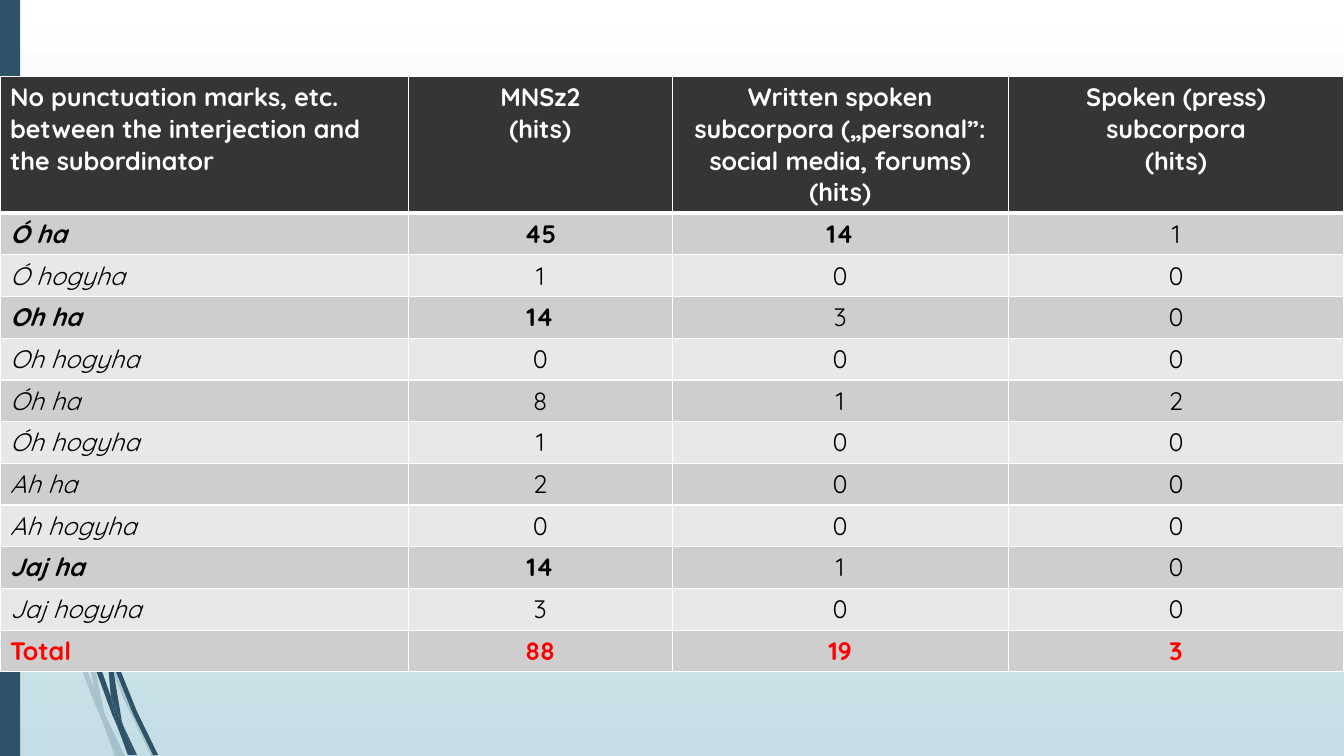
"""Build a slide with a table of interjection and subordinator hits."""
import pptx
import pptx.dml.color
import pptx.enum.shapes
import pptx.enum.text
import pptx.oxml
import pptx.oxml.ns
import pptx.util

Pt = pptx.util.Pt
tint = {"navy": "2E5369", "head": "353535", "odd": "CECECE", "even": "E8E8E8",
        "white": "FFFFFF", "black": "000000", "red": "FF0000", "sky": "C5DEE5"}
space = 'xmlns:a="http://schemas.openxmlformats.org/drawingml/2006/main"'


def rgb(name):
    return pptx.dml.color.RGBColor.from_string(tint[name])


def paint(shape, name):
    shape.shadow.inherit = False
    shape.fill.solid()
    shape.fill.fore_color.rgb = rgb(name)
    shape.line.fill.background()


deck = pptx.Presentation()
deck.slide_width, deck.slide_height = Pt(960), Pt(540)
slide = deck.slides.add_slide(deck.slide_layouts[6])

back = slide.background.fill
back.gradient()
back.gradient_angle = 270
for stop, name in zip(back.gradient_stops, ("white", "sky")):
    stop.color.rgb = rgb(name)

pale = [
    [(66.2, 437), (63.4, 429.1), (63.4, 439.2), (88.6, 499.7), (108, 540),
     (111.6, 540), (91.4, 498.2)],
    [(85.7, 540), (89.3, 540), (75.6, 511.9)],
    [(67, 491.8), (50.4, 445.7), (22.3, 337.7), (12.2, 270.7), (7.9, 252),
     (20.2, 338.4), (46.8, 447.1), (66.2, 499), (72.7, 514.1), (71.3, 509)],
    [(60.5, 431.3), (62.6, 465.1), (67, 491.8), (69.1, 498.2), (75.6, 511.9),
     (74.2, 508.3), (65.5, 465.1), (63.4, 439.2), (63.4, 437.8)],
    [(72.7, 514.1), (82.1, 540), (85.7, 540)],
    [(69.1, 498.2), (67, 491.8), (71.3, 509), (72.7, 514.1), (85.7, 540),
     (75.6, 511.9)],
]
dark = [
    [(81.4, 467.3), (79.2, 461.5), (79.9, 472.3), (95, 509.8), (109.4, 539.3),
     (113, 539.3), (97.9, 508.3)],
    [(79.2, 497.5), (70.6, 473), (51.8, 400.3), (46.1, 363.6), (41, 343.4),
     (49, 401), (67, 474.5), (79.9, 509.8), (84.2, 519.8), (83.5, 516.2)],
    [(95.8, 539.3), (97.9, 539.3), (87.8, 517.7)],
    [(84.2, 519.8), (91.4, 539.3), (94.3, 539.3)],
    [(76.3, 464.4), (79.2, 497.5), (83.5, 508.3), (87.8, 517.7), (87.1, 515.5),
     (79.9, 472.3), (78.5, 468.7)],
    [(83.5, 508.3), (79.2, 497.5), (83.5, 516.2), (84.2, 519.8), (93.6, 539.3),
     (95.8, 539.3), (87.8, 517.7)],
]
for blades, alpha in ((pale, 20), (dark, 100)):
    for blade in blades:
        dots = [(Pt(x), Pt(y)) for x, y in blade]
        pen = slide.shapes.build_freeform(*dots[0])
        pen.add_line_segments(dots[1:])
        leaf = pen.convert_to_shape()
        paint(leaf, "navy")
        if alpha < 100:
            color = leaf.fill._xPr.find(".//" + pptx.oxml.ns.qn("a:srgbClr"))
            color.append(pptx.oxml.parse_xml(f'<a:alpha {space} val="{alpha * 1000}"/>'))

bar = slide.shapes.add_shape(pptx.enum.shapes.MSO_SHAPE.RECTANGLE, 0, 0, Pt(14.4), Pt(540))
paint(bar, "navy")

rows = [
    ("No punctuation marks, etc. between the interjection and the subordinator",
     "MNSz2\n(hits)",
     "Written spoken subcorpora („personal”: social media, forums)\n(hits)",
     "Spoken (press) subcorpora\n(hits)"),
    ("Ó ha", "45", "14", "1"),
    ("Ó hogyha", "1", "0", "0"),
    ("Oh ha", "14", "3", "0"),
    ("Oh hogyha", "0", "0", "0"),
    ("Óh ha", "8", "1", "2"),
    ("Óh hogyha", "1", "0", "0"),
    ("Ah ha", "2", "0", "0"),
    ("Ah hogyha", "0", "0", "0"),
    ("Jaj ha", "14", "1", "0"),
    ("Jaj hogyha", "3", "0", "0"),
    ("Total", "88", "19", "3"),
]
last = len(rows) - 1
strong = {(1, 0), (1, 1), (1, 2), (3, 0), (3, 1), (9, 0), (9, 1)}

frame = slide.shapes.add_table(len(rows), 4, 0, Pt(54.7), Pt(960), Pt(410.4))
grid = frame.table
for col, width in zip(grid.columns, (291.6, 188.6, 239.9, 239.9)):
    col.width = Pt(width)
for r, row in enumerate(rows):
    grid.rows[r].height = Pt(27.4 if r else 64.8)
    shade = "head" if r == 0 else "odd" if r % 2 else "even"
    ink = {0: "white", last: "red"}.get(r, "black")
    for c, text in enumerate(row):
        cell = grid.cell(r, c)
        cell.fill.solid()
        cell.fill.fore_color.rgb = rgb(shade)
        cell.text_frame.text = text
        style = {"name": "Quicksand", "size": Pt(18),
                 "bold": r in (0, last) or (r, c) in strong,
                 "italic": c == 0 and 0 < r < last}
        for para in cell.text_frame.paragraphs:
            if c:
                para.alignment = pptx.enum.text.PP_ALIGN.CENTER
            font = para.runs[0].font
            for key, value in style.items():
                setattr(font, key, value)
            font.color.rgb = rgb(ink)
        for n, side in enumerate("LRTB"):
            thick = (r, side) in ((0, "B"), (1, "T"))
            edge = pptx.oxml.parse_xml(
                f'<a:ln{side} {space} w="{Pt(3 if thick else 1)}"><a:solidFill>'
                f'<a:srgbClr val="{tint["white"]}"/></a:solidFill></a:ln{side}>')
            cell._tc.get_or_add_tcPr().insert(n, edge)
frame.height = Pt(410.4)

deck.save("out.pptx")
